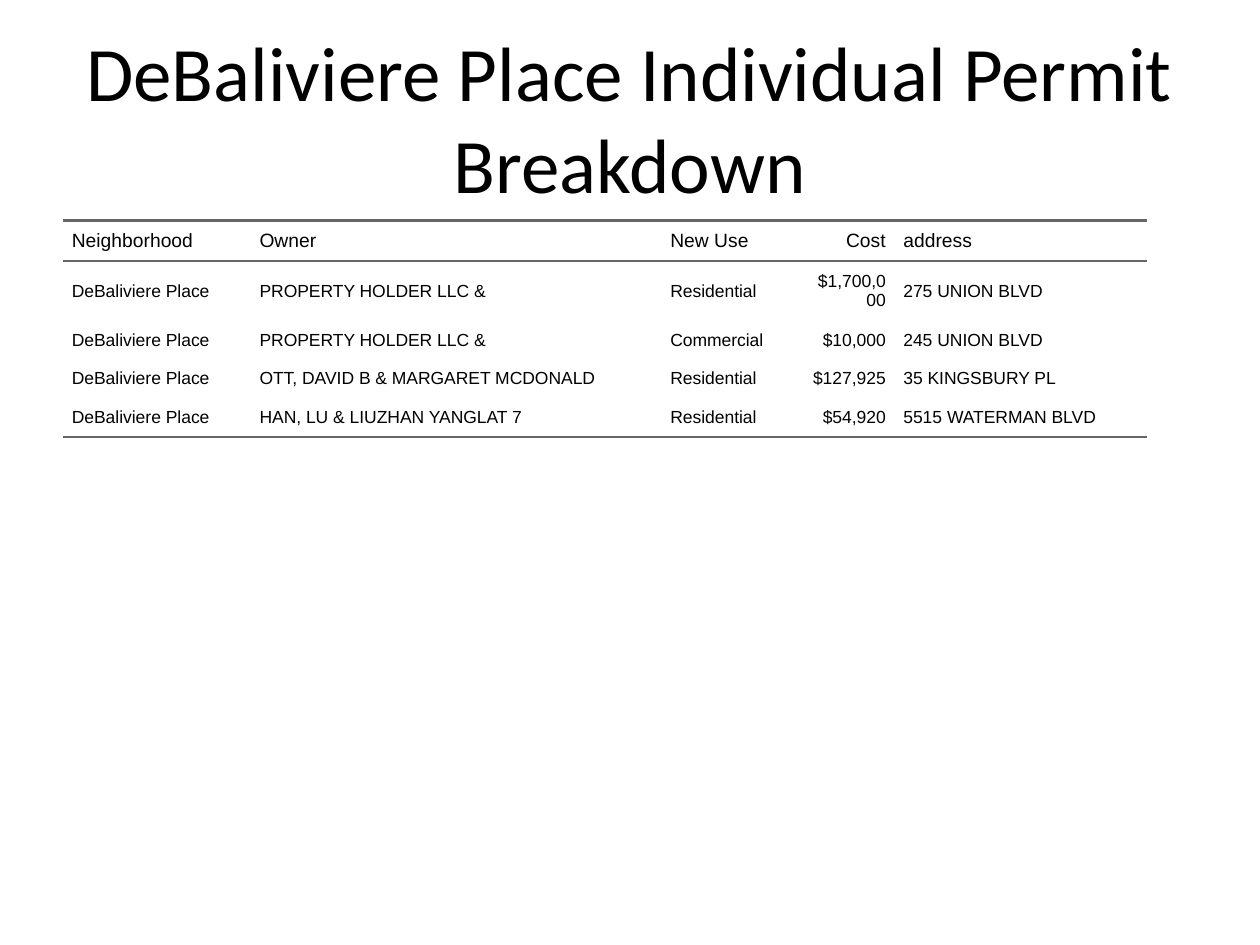
from dataclasses import dataclass
from typing import NamedTuple

from lxml import etree
from pptx import Presentation
from pptx.dml.color import RGBColor
from pptx.enum.text import MSO_ANCHOR, PP_ALIGN
from pptx.oxml.ns import qn
from pptx.util import Emu, Inches, Pt

MIDDLE = MSO_ANCHOR.MIDDLE
LEFT, CENTER, RIGHT = PP_ALIGN.LEFT, PP_ALIGN.CENTER, PP_ALIGN.RIGHT
PLAIN = "{2D5ABB26-0587-4C30-8999-92F81FD0307C}"


@dataclass(frozen=True)
class Theme:
    ink: str = "000000"
    rule: str = "666666"
    head: str = "Calibri"
    body: str = "Arial"
    title: float = 44
    label: float = 11
    text: float = 10
    space: float = 5
    line: float = 1.5
    pad: float = 0.07


class Column(NamedTuple):
    name: str
    width: float
    align: PP_ALIGN = LEFT


class Permit(NamedTuple):
    owner: str
    use: str
    cost: int
    address: str


THEME = Theme()
WIDE, HIGH = Inches(10), Inches(7.5)
ROW = Inches(0.25)
PLACE = "DeBaliviere Place"
COLUMNS = [
    Column("Neighborhood", 1.49),
    Column("Owner", 3.26),
    Column("New Use", 1.1),
    Column("Cost", 0.75, RIGHT),
    Column("address", 2),
]
PERMITS = [
    Permit("PROPERTY HOLDER LLC &", "Residential", 1700000, "275 UNION BLVD"),
    Permit("PROPERTY HOLDER LLC &", "Commercial", 10000, "245 UNION BLVD"),
    Permit("OTT, DAVID B & MARGARET MCDONALD", "Residential", 127925, "35 KINGSBURY PL"),
    Permit("HAN, LU & LIUZHAN YANGLAT 7", "Residential", 54920, "5515 WATERMAN BLVD"),
]


def apply(item, values: dict) -> None:
    """Set each named attribute on the item."""
    for name, value in values.items():
        setattr(item, name, value)


def write(frame, text: str, face: str, size: float, align: PP_ALIGN):
    """Write one styled paragraph and return it."""
    para = frame.paragraphs[0]
    para.alignment = align
    run = para.add_run()
    run.text = text
    apply(run.font, {"name": face, "size": Pt(size)})
    run.font.color.rgb = RGBColor.from_string(THEME.ink)
    return para


def rule(cell, sides: str) -> None:
    """Draw border lines on the given sides, T before B."""
    props = cell._tc.get_or_add_tcPr()
    for spot, side in enumerate(sides):
        line = etree.Element(qn(f"a:ln{side}"), w=str(Pt(THEME.line)))
        fill = etree.SubElement(line, qn("a:solidFill"))
        etree.SubElement(fill, qn("a:srgbClr"), val=THEME.rule)
        props.insert(spot, line)


def fill_cell(cell, text: str, size: float, align: PP_ALIGN, sides: str) -> None:
    """Fill one table cell with padded text and its rules."""
    pad = Inches(THEME.pad)
    apply(cell, {
        "margin_left": 0, "margin_right": 0,
        "margin_top": pad, "margin_bottom": pad,
        "vertical_anchor": MIDDLE,
    })
    cell.fill.background()
    para = write(cell.text_frame, text, THEME.body, size, align)
    apply(para, {"space_before": Pt(THEME.space), "space_after": Pt(THEME.space)})
    props = para._p.get_or_add_pPr()
    for name, value in {"marL": pad, "marR": pad, "indent": 0}.items():
        props.set(name, str(value))
    rule(cell, sides)


def add_title(slide, text: str) -> None:
    """Add the centred slide title."""
    box = slide.shapes.add_textbox(
        Emu(int(WIDE * 0.05)), Emu(int(HIGH * 0.04)),
        Emu(int(WIDE * 0.9)), Inches(1.25))
    apply(box.text_frame, {"word_wrap": True, "vertical_anchor": MIDDLE})
    write(box.text_frame, text, THEME.head, THEME.title, CENTER)


def add_permits(slide) -> None:
    """Add the permit table with a ruled header and closing line."""
    rows = [[column.name for column in COLUMNS]]
    rows += [[PLACE, p.owner, p.use, f"${p.cost:,}", p.address] for p in PERMITS]
    total = Inches(sum(column.width for column in COLUMNS))
    table = slide.shapes.add_table(
        len(rows), len(COLUMNS), Emu(int(WIDE * 0.05)), Inches(1.75),
        total, ROW * len(rows)).table
    apply(table, {"first_row": False, "horz_banding": False})
    table._tbl.tblPr.find(qn("a:tableStyleId")).text = PLAIN
    for index, column in enumerate(COLUMNS):
        table.columns[index].width = Inches(column.width)
    edges = {0: "TB", len(rows) - 1: "B"}
    for r, row in enumerate(rows):
        size = THEME.text if r else THEME.label
        for c, text in enumerate(row):
            fill_cell(table.cell(r, c), text, size, COLUMNS[c].align, edges.get(r, ""))


def main() -> None:
    """Build and save the slide."""
    deck = Presentation()
    apply(deck, {"slide_width": WIDE, "slide_height": HIGH})
    slide = deck.slides.add_slide(deck.slide_layouts[6])
    add_title(slide, f"{PLACE} Individual Permit Breakdown")
    add_permits(slide)
    deck.save("out.pptx")


if __name__ == "__main__":
    main()
